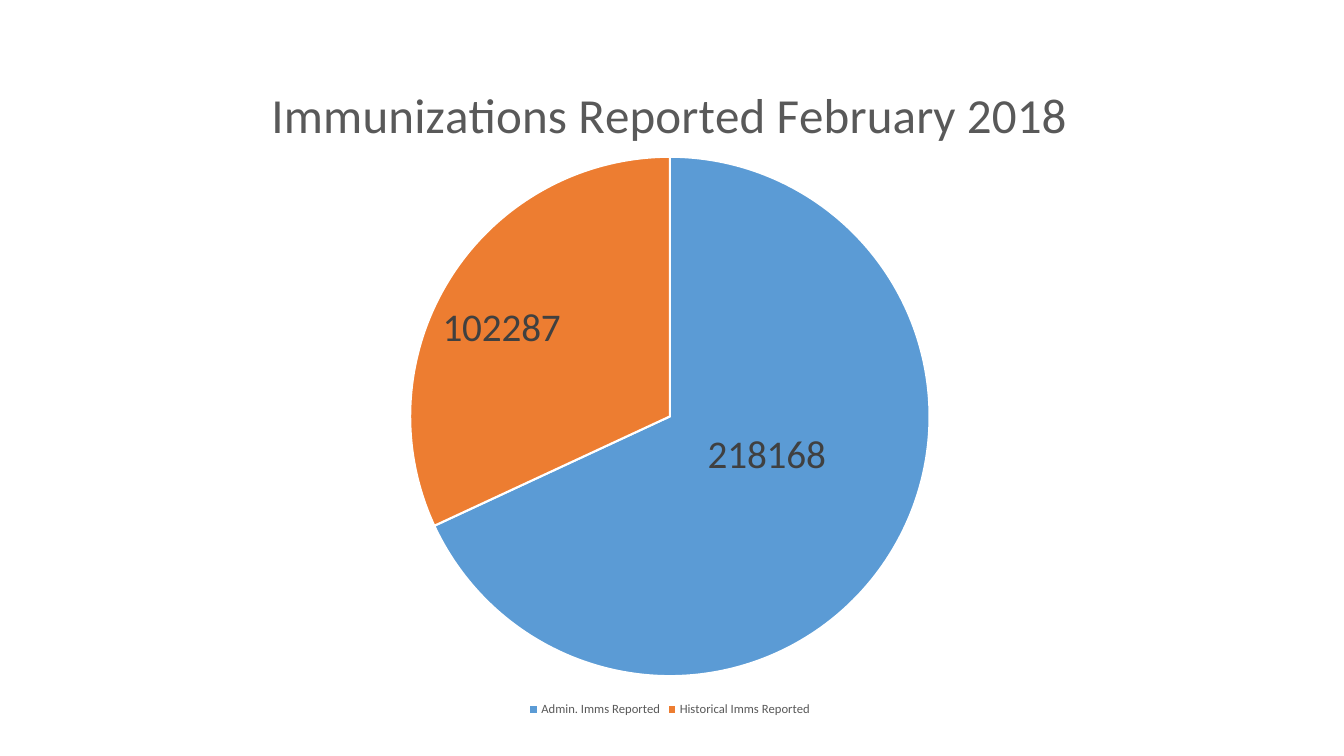
from lxml import etree
from pptx import Presentation
from pptx.chart.data import CategoryChartData
from pptx.dml.color import RGBColor
from pptx.enum.chart import XL_CHART_TYPE, XL_LABEL_POSITION, XL_LEGEND_POSITION
from pptx.oxml.ns import qn
from pptx.util import Pt

PIE = XL_CHART_TYPE.PIE
CENTER = XL_LABEL_POSITION.CENTER
BOTTOM = XL_LEGEND_POSITION.BOTTOM
FONT = "Calibri"
WHITE, GRAY, DARK_GRAY = "FFFFFF", "595959", "404040"
TITLE = "Immunizations Reported February 2018"
SLICES = [
    ("Admin. Imms Reported", 218168, "5B9BD5", (-9, -22)),
    ("Historical Imms Reported", 102287, "ED7D31", (-42, -13)),
]
CHART_BOX = (90, 38, 777, 477)
PIE_BOX = (203, 74, 371, 371)


def color(value):
    """Turn a hex string into a colour."""
    return RGBColor.from_string(value)


def format_font(font, size, hex_color, bold=False):
    """Set the face, size, colour and weight of a font."""
    font.name = FONT
    font.size = Pt(size)
    font.bold = bold
    font.color.rgb = color(hex_color)


def write_text(text_frame, text, **text_format):
    """Write one formatted run into a text frame."""
    run = text_frame.paragraphs[0].add_run()
    run.text = text
    format_font(run.font, **text_format)


def manual_layout(**values):
    """Build a chart layout element from its settings."""
    layout = etree.Element(qn("c:layout"))
    manual = etree.SubElement(layout, qn("c:manualLayout"))
    for name, value in values.items():
        etree.SubElement(manual, qn(f"c:{name}")).set("val", str(value))
    return layout


def place_pie(chart, width, height):
    """Fix the pie within a chart of the given size."""
    plot_area = chart.element.find(".//" + qn("c:plotArea"))
    for layout in plot_area.findall(qn("c:layout")):
        plot_area.remove(layout)
    left, top, pie_width, pie_height = PIE_BOX
    plot_area.insert(0, manual_layout(
        layoutTarget="inner", xMode="edge", yMode="edge",
        x=left / width, y=top / height,
        w=pie_width / width, h=pie_height / height))


def style_slices(chart, width, height):
    """Colour the slices and shift their value labels."""
    plot = chart.plots[0]
    plot.vary_by_categories = True
    plot.has_data_labels = True
    plot.data_labels.show_value = True
    plot.data_labels.show_percentage = False
    format_font(plot.data_labels.font, 28, DARK_GRAY)
    series = plot.series[0]
    for index, (_, _, fill, (shift_x, shift_y)) in enumerate(SLICES):
        point = series.points[index]
        point.format.fill.solid()
        point.format.fill.fore_color.rgb = color(fill)
        point.format.line.color.rgb = color(WHITE)
        point.format.line.width = Pt(1.5)
        format_font(point.data_label.font, 28, DARK_GRAY)
        point.data_label.position = CENTER
    labels = series.data_labels
    labels.show_value = True
    labels.show_percentage = False
    format_font(labels.font, 28, DARK_GRAY)
    label_elements = chart.element.iter(qn("c:dLbl"))
    for label, (_, _, _, (shift_x, shift_y)) in zip(list(label_elements), SLICES):
        label.insert(1, manual_layout(x=shift_x / width, y=shift_y / height))


def add_pie(slide, left, top, width, height):
    """Add the immunization pie with its title and legend."""
    data = CategoryChartData(number_format="General")
    data.categories = [name for name, *_ in SLICES]
    data.add_series("Series 1", [value for _, value, *_ in SLICES])
    chart = slide.shapes.add_chart(
        PIE, Pt(left), Pt(top), Pt(width), Pt(height), data).chart
    format_font(chart.font, 10, "000000")
    chart.has_title = True
    write_text(chart.chart_title.text_frame, TITLE, size=35, hex_color=GRAY)
    chart.chart_title.include_in_layout = False
    chart.has_legend = True
    chart.legend.position = BOTTOM
    chart.legend.include_in_layout = False
    format_font(chart.legend.font, 9, GRAY)
    style_slices(chart, width, height)
    place_pie(chart, width, height)


def main():
    """Build and save the presentation."""
    presentation = Presentation()
    presentation.slide_width, presentation.slide_height = Pt(960), Pt(540)
    slide = presentation.slides.add_slide(presentation.slide_layouts[6])
    add_pie(slide, *CHART_BOX)
    presentation.save("out.pptx")


if __name__ == "__main__":
    main()
